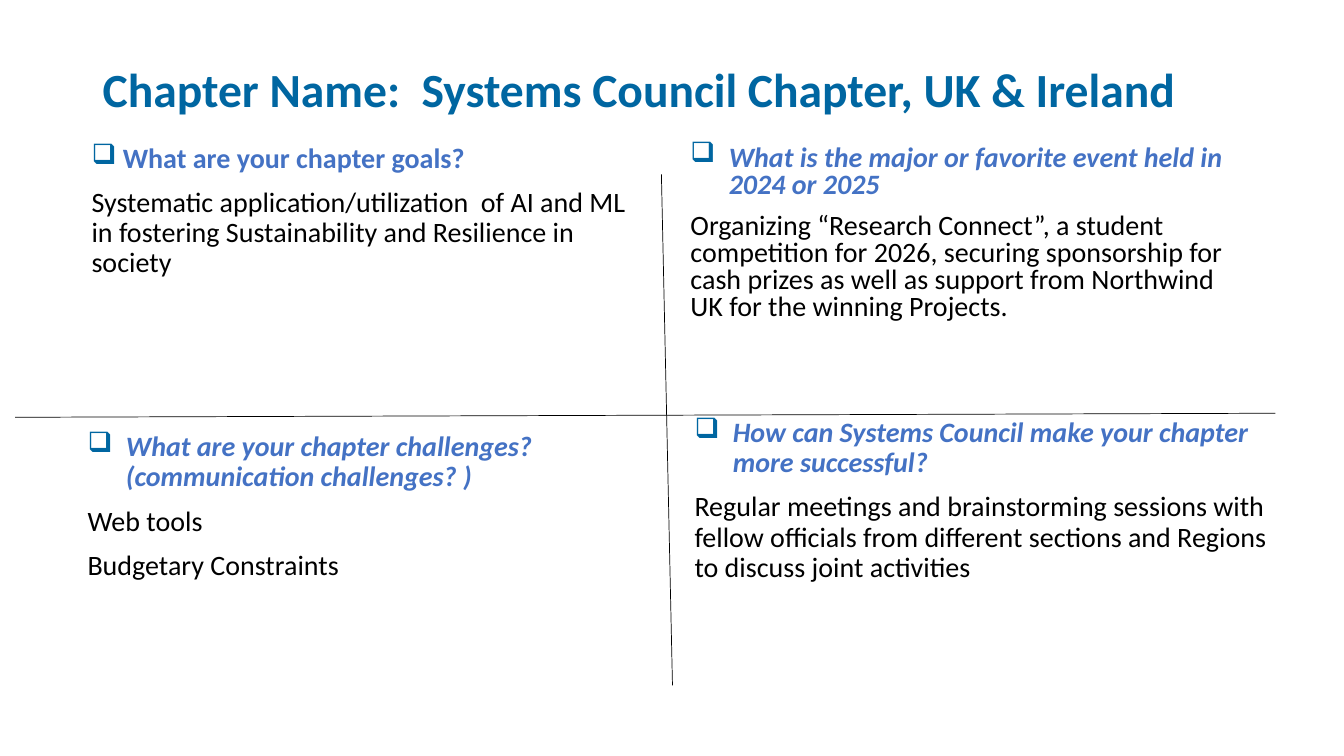
import dataclasses

import lxml.etree
import pptx
import pptx.dml.color
import pptx.enum.shapes
import pptx.enum.text
import pptx.oxml.ns
import pptx.util

Inches = pptx.util.Inches
Pt = pptx.util.Pt
COLORS = {"title": "0066A1", "question": "4472C4", "answer": "000000", "line": "000000"}
FONT = "Calibri"


@dataclasses.dataclass
class Quadrant:
    left: float
    top: float
    width: float
    question: str
    answers: list[str]
    italic: bool = True
    indent: float = 0.38
    spacing: float = 0.9


@dataclasses.dataclass
class Divider:
    start: tuple[float, float]
    end: tuple[float, float]


QUADRANTS = [
    Quadrant(0.81, 1.38, 5.67, "What are your chapter goals?",
             ["Systematic application/utilization  of AI and ML in fostering "
              "Sustainability and Resilience in society"],
             italic=False, indent=0.31),
    Quadrant(6.75, 1.4, 5.67, "What is the major or favorite event held in 2024 or 2025",
             ["Organizing “Research Connect”, a student competition for 2026, securing "
              "sponsorship for cash prizes as well as support from Northwind UK for the "
              "winning Projects."],
             spacing=0.8),
    Quadrant(0.77, 4.24, 5.67,
             "What are your chapter challenges? (communication challenges? )",
             ["Web tools", "Budgetary Constraints"]),
    Quadrant(6.79, 4.1, 6.1, "How can Systems Council make your chapter more successful?",
             ["Regular meetings and brainstorming sessions with fellow officials from "
              "different sections and Regions to discuss joint activities"]),
]
DIVIDERS = [Divider((6.56, 1.73), (6.67, 6.8)), Divider((0.15, 4.14), (12.65, 4.1))]


def color(name: str) -> pptx.dml.color.RGBColor:
    return pptx.dml.color.RGBColor.from_string(COLORS[name])


def add_box(page, left: float, top: float, width: float, height: float):
    box = page.shapes.add_textbox(Inches(left), Inches(top), Inches(width), Inches(height))
    box.text_frame.word_wrap = True
    return box.text_frame


def add_span(para, text: str, size: int, role: str, bold: bool = False,
             italic: bool = False) -> None:
    span = para.add_run()
    span.text = text
    span.font.name = FONT
    span.font.size = Pt(size)
    span.font.bold = bold
    span.font.italic = italic
    span.font.color.rgb = color(role)


def add_bullet(para, indent: float) -> None:
    properties = para._p.get_or_add_pPr()
    properties.set("marL", str(Inches(indent)))
    properties.set("indent", str(-Inches(indent)))
    qn = pptx.oxml.ns.qn
    bullet_color = lxml.etree.SubElement(properties, qn("a:buClr"))
    lxml.etree.SubElement(bullet_color, qn("a:srgbClr"), val=COLORS["title"])
    lxml.etree.SubElement(properties, qn("a:buChar"), char="❑")


def add_title(page, text: str) -> None:
    frame = add_box(page, 0.92, 0.61, 11.84, 0.61)
    frame.vertical_anchor = pptx.enum.text.MSO_ANCHOR.BOTTOM
    para = frame.paragraphs[0]
    para.line_spacing = 0.9
    add_span(para, text, 34, "title", bold=True)


def add_quadrant(page, quadrant: Quadrant) -> None:
    frame = add_box(page, quadrant.left, quadrant.top, quadrant.width, 1.98)
    para = frame.paragraphs[0]
    para.line_spacing = quadrant.spacing
    add_bullet(para, quadrant.indent)
    add_span(para, quadrant.question, 20, "question", bold=True, italic=quadrant.italic)
    for answer in quadrant.answers:
        para = frame.add_paragraph()
        para.line_spacing = quadrant.spacing
        para.space_before = Pt(10)
        add_span(para, answer, 20, "answer")


def add_divider(page, divider: Divider) -> None:
    points = [Inches(value) for value in (*divider.start, *divider.end)]
    line = page.shapes.add_connector(pptx.enum.shapes.MSO_CONNECTOR.STRAIGHT, *points)
    line.line.color.rgb = color("line")
    line.line.width = Pt(0.5)
    lxml.etree.SubElement(line._element.spPr, pptx.oxml.ns.qn("a:effectLst"))


def main() -> None:
    deck = pptx.Presentation()
    deck.slide_width = Inches(13.33)
    deck.slide_height = Inches(7.5)
    page = deck.slides.add_slide(deck.slide_layouts[6])
    add_title(page, "Chapter Name:  Systems Council Chapter, UK & Ireland")
    for quadrant in QUADRANTS:
        add_quadrant(page, quadrant)
    for divider in DIVIDERS:
        add_divider(page, divider)
    deck.save("out.pptx")


if __name__ == "__main__":
    main()
